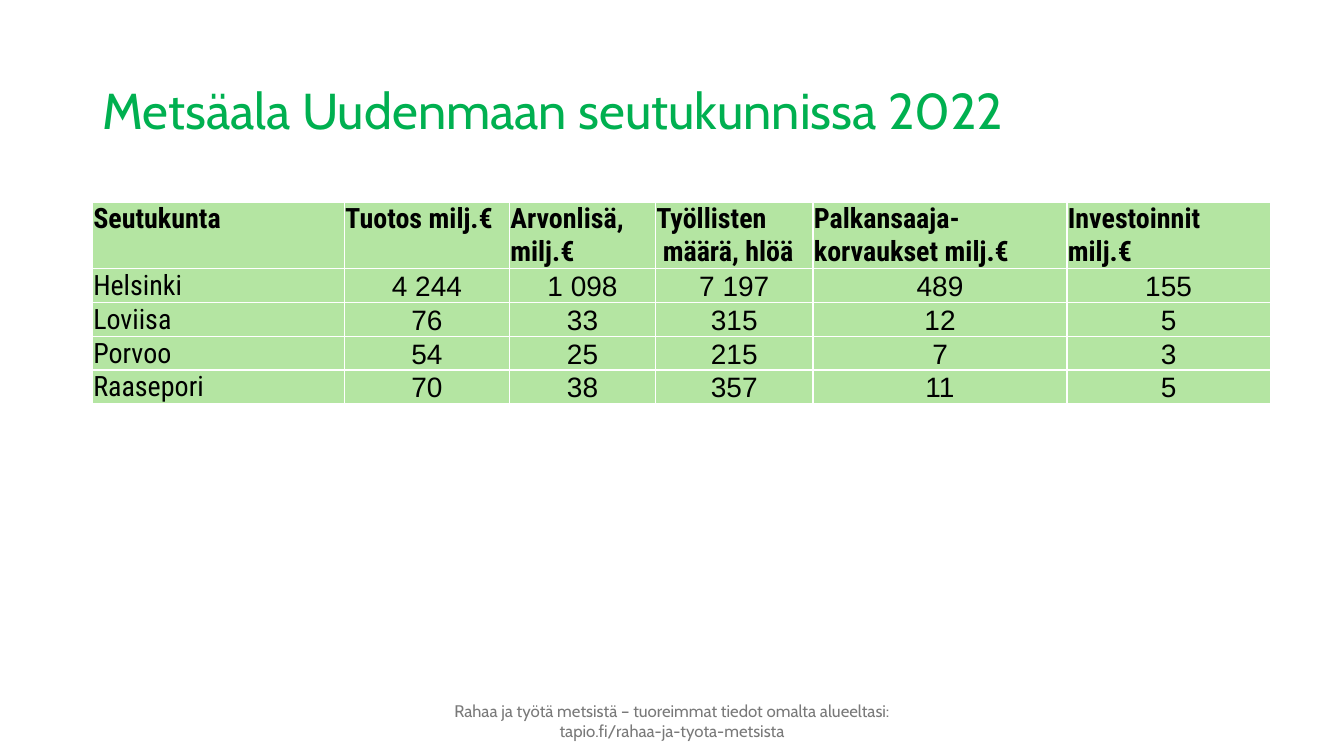
import pptx
import pptx.util
import pptx.dml.color
import pptx.enum.text
import pptx.oxml
import pptx.oxml.ns

Cm = pptx.util.Cm
ANCHOR = pptx.enum.text.MSO_ANCHOR
ALIGN = pptx.enum.text.PP_ALIGN

HEADER = ["Seutukunta", "Tuotos milj.€", "Arvonlisä, milj.€",
          "Työllisten\n määrä, hlöä", "Palkansaaja-korvaukset milj.€",
          "Investoinnit\nmilj.€"]
ROWS = [
    ["Helsinki", "4 244", "1 098", "7 197", "489", "155"],
    ["Loviisa", "76", "33", "315", "12", "5"],
    ["Porvoo", "54", "25", "215", "7", "3"],
    ["Raasepori", "70", "38", "357", "11", "5"],
]
COL_WIDTHS = [6.35, 4.16, 3.68, 3.97, 6.4, 5.12]
HEADER_HEIGHT = 1.65
ROW_HEIGHT = 0.85


def rgb(color):
    return pptx.dml.color.RGBColor.from_string(color)


def write(tf, text, font, size, color="000000", bold=False,
          align=ALIGN.LEFT, spacing=None):
    tf.word_wrap = True
    for i, line in enumerate(text.split("\n")):
        p = tf.paragraphs[0] if i == 0 else tf.add_paragraph()
        p.alignment = align
        p.line_spacing = spacing
        r = p.add_run()
        r.text = line
        r.font.name = font
        r.font.size = pptx.util.Pt(size)
        r.font.bold = bold
        r.font.color.rgb = rgb(color)


def add_borders(cell, color):
    tc_pr = cell._tc.get_or_add_tcPr()
    for i, side in enumerate(("lnL", "lnR", "lnT", "lnB")):
        ln = pptx.oxml.parse_xml(
            f'<a:{side} {pptx.oxml.ns.nsdecls("a")} w="12700"><a:solidFill>'
            f'<a:srgbClr val="{color}"/></a:solidFill></a:{side}>')
        tc_pr.insert(i, ln)


def format_cell(cell, inset):
    cell.fill.solid()
    cell.fill.fore_color.rgb = rgb("B4E5A2")
    cell.margin_left = cell.margin_right = cell.margin_top = Cm(inset)
    cell.margin_bottom = 0
    add_borders(cell, "FFFFFF")


def add_title(s, x, y, w, h):
    sp = s.shapes.title
    sp.left, sp.top, sp.width, sp.height = Cm(x), Cm(y), Cm(w), Cm(h)
    sp.text_frame.vertical_anchor = ANCHOR.MIDDLE
    write(sp.text_frame, "Metsäala Uudenmaan seutukunnissa 2022",
          "Cabin", 36, color="00B050", spacing=0.9)


def add_region_table(s, x, y):
    height = HEADER_HEIGHT + ROW_HEIGHT * len(ROWS)
    table = s.shapes.add_table(len(ROWS) + 1, len(HEADER), Cm(x), Cm(y),
                               Cm(sum(COL_WIDTHS)), Cm(height)).table
    for column, width in zip(table.columns, COL_WIDTHS):
        column.width = Cm(width)
    for i, values in enumerate([HEADER] + ROWS):
        header = i == 0
        table.rows[i].height = Cm(HEADER_HEIGHT if header else ROW_HEIGHT)
        for j, value in enumerate(values):
            cell = table.cell(i, j)
            label = header or j == 0
            format_cell(cell, 0.02 if label else 0)
            cell.vertical_anchor = ANCHOR.TOP if header else ANCHOR.BOTTOM
            write(cell.text_frame, value,
                  "Roboto Condensed" if label else "Arial", 20, bold=header,
                  align=ALIGN.LEFT if label else ALIGN.CENTER)


def add_footer(s, x, y, w, h):
    tf = s.shapes.add_textbox(Cm(x), Cm(y), Cm(w), Cm(h)).text_frame
    tf.vertical_anchor = ANCHOR.MIDDLE
    write(tf, "Rahaa ja työtä metsistä – tuoreimmat tiedot omalta alueeltasi: "
          "tapio.fi/rahaa-ja-tyota-metsista",
          "Cabin", 12, color="797979", align=ALIGN.CENTER)


def main():
    prs = pptx.Presentation()
    prs.slide_width, prs.slide_height = Cm(33.87), Cm(19.05)
    s = prs.slides.add_slide(prs.slide_layouts[5])
    add_title(s, 2.33, 1.01, 29.21, 3.68)
    add_region_table(s, 2.33, 5.09)
    add_footer(s, 10.82, 17.66, 12.24, 1.01)
    prs.save("out.pptx")


if __name__ == "__main__":
    main()
